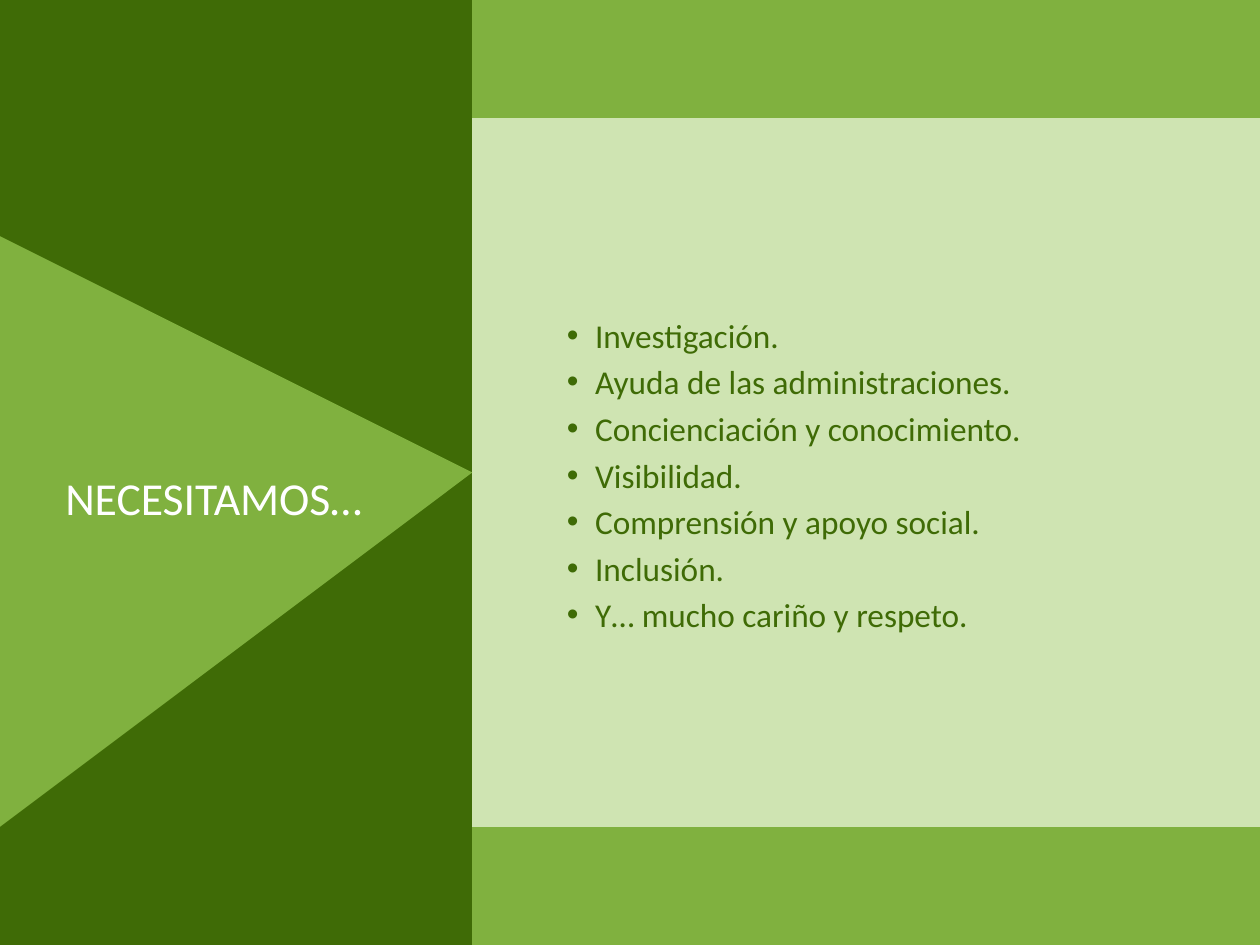
from pptx import Presentation
from pptx.dml.color import RGBColor
from pptx.enum.text import MSO_ANCHOR, MSO_AUTO_SIZE, PP_ALIGN
from pptx.util import Inches, Pt

TOP, FIXED = MSO_ANCHOR.TOP, MSO_AUTO_SIZE.NONE
LEFT, CENTER = PP_ALIGN.LEFT, PP_ALIGN.CENTER

WIDE, HIGH = 10.67, 8
SPLIT = 4.37
BAND = 0.87
COLORS = {"dark": "3F6B06", "mid": "80B13F", "pale": "CFE4B2", "white": "FFFFFF"}
FRAME = {"margin_left": 0, "margin_right": 0, "margin_top": 0, "margin_bottom": 0,
         "word_wrap": True, "auto_size": FIXED, "vertical_anchor": TOP}
NEEDS = [
    "Investigación.",
    "Ayuda de las administraciones.",
    "Concienciación y conocimiento.",
    "Visibilidad.",
    "Comprensión y apoyo social.",
    "Inclusión.",
    "Y… mucho cariño y respeto.",
]


def color(name):
    return RGBColor.from_string(COLORS[name])


def apply(item, values):
    for name, value in values.items():
        setattr(item, name, value)


def add_area(slide, points, fill):
    """Draw a filled outline through points given in inches."""
    pen = slide.shapes.build_freeform(*points[0], scale=Inches(1))
    pen.add_line_segments(points[1:], close=True)
    area = pen.convert_to_shape()
    area.shadow.inherit = False
    area.fill.solid()
    area.fill.fore_color.rgb = color(fill)
    area.line.fill.background()


def add_band(slide, top, high, fill):
    """Fill the right column from top downwards."""
    low = top + high
    add_area(slide, [(SPLIT, top), (WIDE, top), (WIDE, low), (SPLIT, low)], fill)


def fill_text(holder, box, lines, size, tint, layout):
    """Place a placeholder in front of the areas and write its lines."""
    tree = holder.element.getparent()
    tree.append(holder.element)
    sides = ("left", "top", "width", "height")
    apply(holder, dict(zip(sides, map(Inches, box))))
    frame = holder.text_frame
    frame.text = "\n".join(lines)
    apply(frame, FRAME)
    for para in frame.paragraphs:
        apply(para, {"space_before": Pt(0), "space_after": Pt(0), **layout})
        for run in para.runs:
            apply(run.font, {"name": "Calibri", "size": Pt(size)})
            run.font.color.rgb = color(tint)


def set_indent(holder, margin, hang):
    for para in holder.text_frame.paragraphs:
        props = para._p.get_or_add_pPr()
        props.set("marL", str(Inches(margin)))
        props.set("indent", str(Inches(-hang)))


def main():
    deck = Presentation()
    deck.slide_width, deck.slide_height = Inches(WIDE), Inches(HIGH)
    slide = deck.slides.add_slide(deck.slide_layouts[1])
    slide.background.fill.solid()
    slide.background.fill.fore_color.rgb = color("dark")

    add_band(slide, 0, HIGH, "pale")
    for top in (0, HIGH - BAND):
        add_band(slide, top, BAND, "mid")
    add_area(slide, [(0, 1.78), (4.17, 4.19), (0, 6.6)], "mid")

    title, body = slide.shapes.title, slide.placeholders[1]
    fill_text(title, (0, 3.9, 3.62, 0.51), ["NECESITAMOS…"], 27.9, "white",
              {"alignment": CENTER, "line_spacing": Pt(39.1)})
    fill_text(body, (4.56, 2.61, 6.11, 3.1), NEEDS, 20.3, "dark",
              {"alignment": LEFT, "line_spacing": Pt(28.4)})
    set_indent(body, 0.48, 0.24)
    deck.save("out.pptx")


if __name__ == "__main__":
    main()
